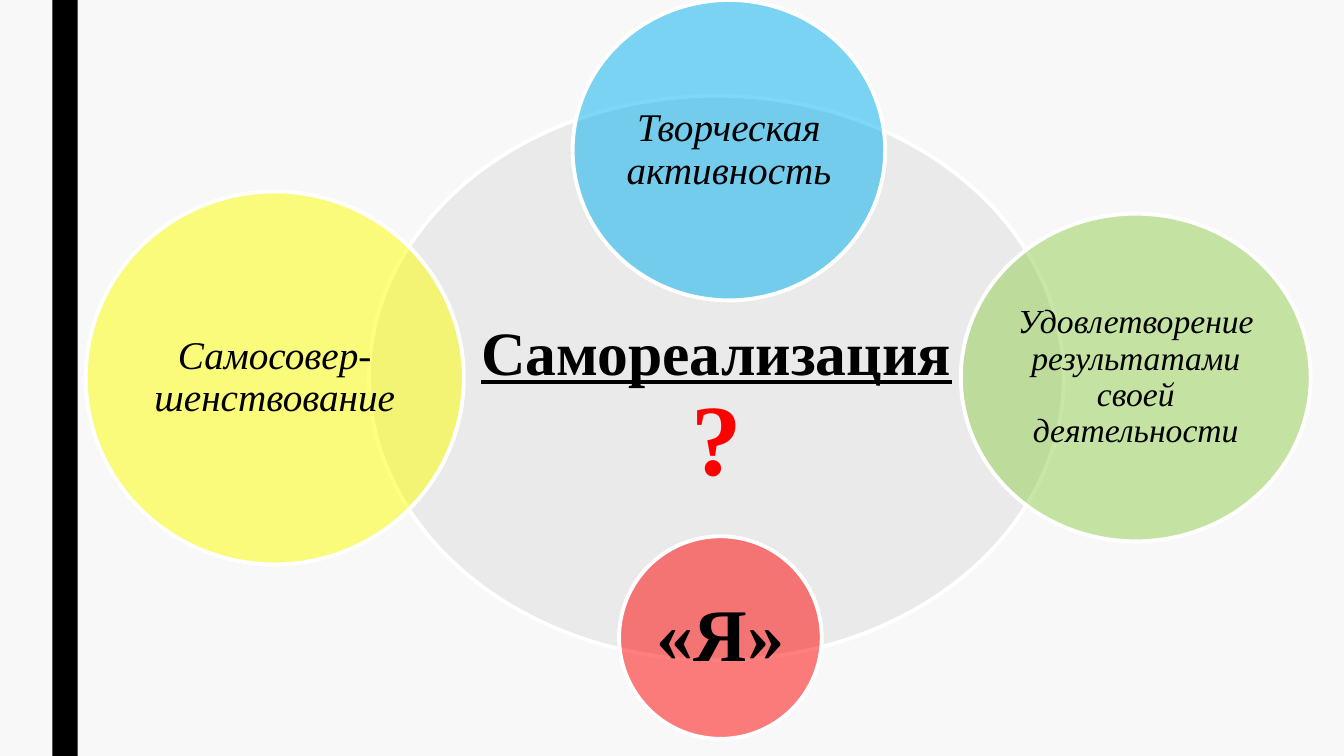
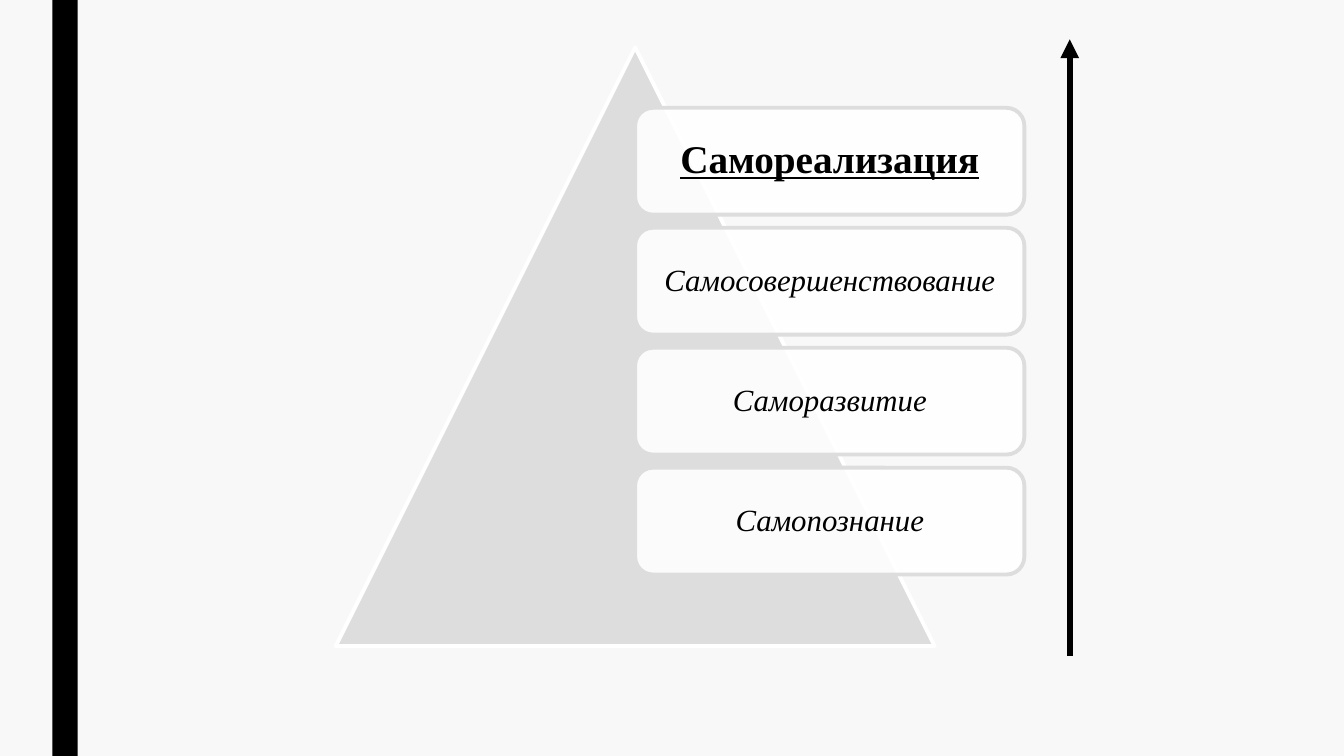
from dataclasses import dataclass

from lxml.etree import SubElement
from pptx import Presentation
from pptx.dml.color import RGBColor
from pptx.enum.shapes import MSO_CONNECTOR as Link, MSO_SHAPE as Form
from pptx.enum.text import MSO_ANCHOR as Anchor, PP_ALIGN as Align
from pptx.oxml.ns import qn
from pptx.util import Inches, Pt

FONT = "Times New Roman"
EDGE = 2.75
COLORS = {
    "back": "F8F8F8",
    "black": "000000",
    "white": "FFFFFF",
    "gray": "DDDDDD",
    "yellow": "FFFF00",
    "blue": "00B0F0",
    "red": "FF0000",
    "green": "92D050",
}


@dataclass(frozen=True)
class Label:
    text: str
    size: int
    bold: bool = False
    under: bool = False
    color: str = "black"


@dataclass(frozen=True)
class Disc:
    left: float
    top: float
    width: float
    height: float
    fill: str
    inset: float
    labels: tuple[Label, ...]
    drop: float = 0


DISCS = (
    Disc(3.66, 0.95, 6.89, 5.6, "gray", 0.06,
         (Label("Самореализация", 44, True, True), Label("?", 72, True, color="red")), 0.63),
    Disc(0.85, 1.9, 3.75, 3.7, "yellow", 0.04, (Label("Самосовер-шенствование", 28),)),
    Disc(5.68, 0, 3.1, 2.98, "blue", 0.04, (Label("Творческая активность", 28),)),
    Disc(6.14, 5.32, 2.01, 2.01, "red", 0.07, (Label("«Я»", 53, True),)),
    Disc(9.53, 2.12, 3.47, 3.25, "green", 0.03,
         (Label("Удовлетворение результатами своей деятельности", 24),)),
)
LEVELS = (
    Label("Самореализация", 28, True, True),
    Label("Самосовершенствование", 22),
    Label("Саморазвитие", 22),
    Label("Самопознание", 22),
)


def tint(name: str) -> RGBColor:
    return RGBColor.from_string(COLORS[name])


def draw(slide, form, left: float, top: float, width: float, height: float,
         fill: str, line: str | None = "white", alpha: int = 100):
    shape = slide.shapes.add_shape(form, Inches(left), Inches(top), Inches(width), Inches(height))
    shape.shadow.inherit = False
    shape.fill.solid()
    shape.fill.fore_color.rgb = tint(fill)
    if alpha < 100:
        color = shape.fill._xPr.find(f"{qn('a:solidFill')}/{qn('a:srgbClr')}")
        SubElement(color, qn("a:alpha"), val=str(alpha * 1000))
    if line:
        shape.line.color.rgb = tint(line)
        shape.line.width = Pt(EDGE)
    else:
        shape.line.fill.background()
    return shape


def write(shape, labels: tuple[Label, ...], inset: float, drop: float = 0) -> None:
    frame = shape.text_frame
    frame.word_wrap = True
    frame.vertical_anchor = Anchor.MIDDLE
    frame.margin_left = frame.margin_right = frame.margin_bottom = Inches(inset)
    frame.margin_top = Inches(inset + drop)
    for i, label in enumerate(labels):
        para = frame.add_paragraph() if i else frame.paragraphs[0]
        para.alignment = Align.CENTER
        para.line_spacing = 0.9
        run = para.add_run()
        run.text = label.text
        font = run.font
        font.name = FONT
        font.size = Pt(label.size)
        font.bold = label.bold
        font.italic = not label.bold
        font.underline = label.under
        font.color.rgb = tint(label.color)


def arrow(slide, left: float, start: float, end: float) -> None:
    line = slide.shapes.add_connector(
        Link.STRAIGHT, Inches(left), Inches(start), Inches(left), Inches(end))
    line.line.color.rgb = tint("black")
    line.line.width = Pt(4.5)
    SubElement(line.line._get_or_add_ln(), qn("a:tailEnd"), type="triangle")
    SubElement(line._element.spPr, qn("a:effectLst"))


def start(deck):
    slide = deck.slides.add_slide(deck.slide_layouts[6])
    draw(slide, Form.RECTANGLE, 0.52, 0, 0.25, 7.5, "black", None)
    return slide


def circles(deck) -> None:
    slide = start(deck)
    for disc in DISCS:
        shape = draw(slide, Form.OVAL, disc.left, disc.top, disc.width, disc.height,
                     disc.fill, alpha=50)
        write(shape, disc.labels, disc.inset, disc.drop)


def pyramid(deck) -> None:
    slide = start(deck)
    draw(slide, Form.ISOSCELES_TRIANGLE, 3.33, 0.47, 5.94, 5.94, "gray")
    for i, label in enumerate(LEVELS):
        box = draw(slide, Form.ROUNDED_RECTANGLE, 6.3, 1.07 + 1.19 * i, 3.86, 1.06,
                   "white", "gray", 90)
        write(box, (label,), 0.12 if label.bold else 0.09)
    arrow(slide, 10.61, 6.51, 0.39)


def main() -> None:
    deck = Presentation()
    deck.slide_width = Inches(13.33)
    deck.slide_height = Inches(7.5)
    back = deck.slide_master.background.fill
    back.solid()
    back.fore_color.rgb = tint("back")
    circles(deck)
    pyramid(deck)
    deck.save("out.pptx")


if __name__ == "__main__":
    main()
